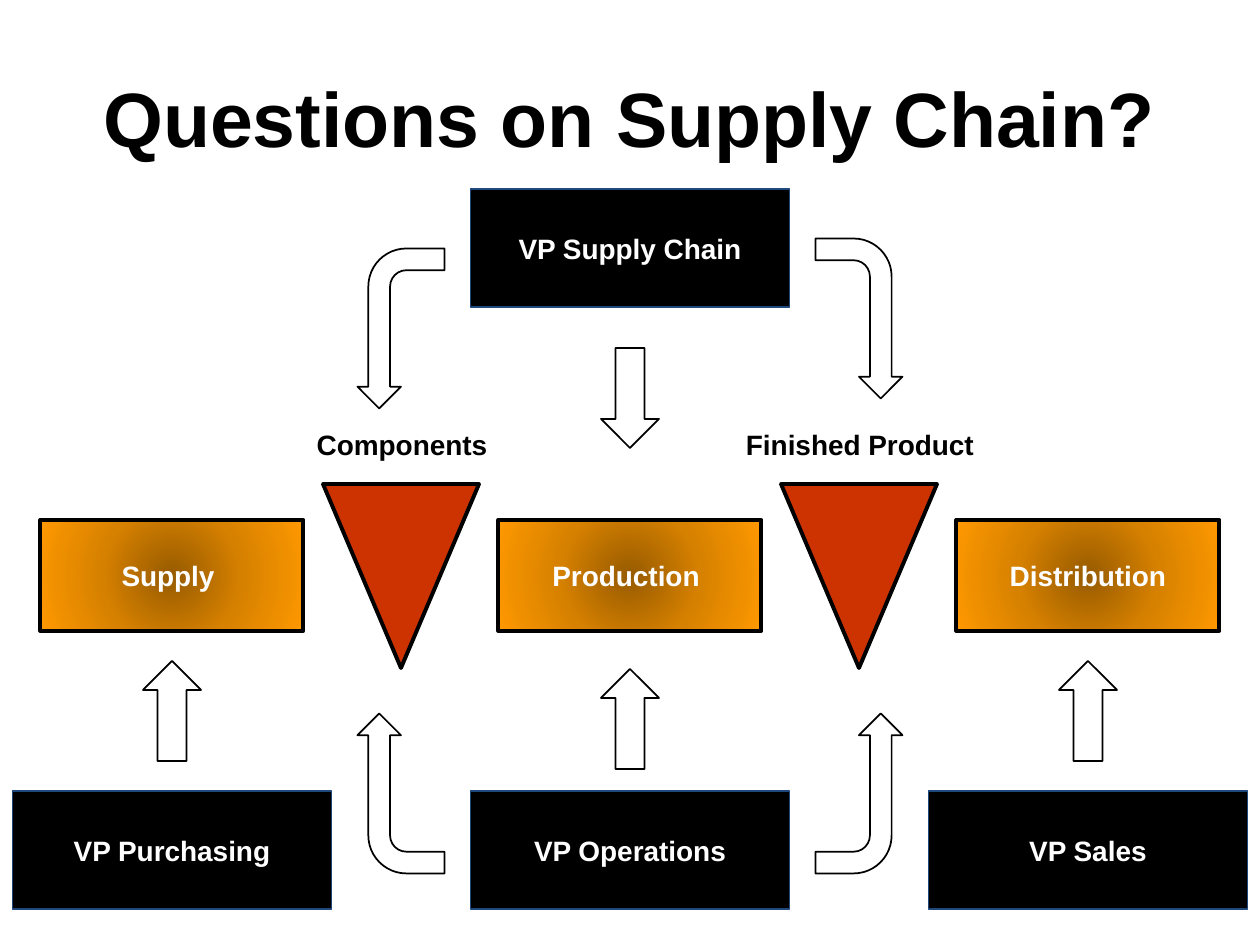
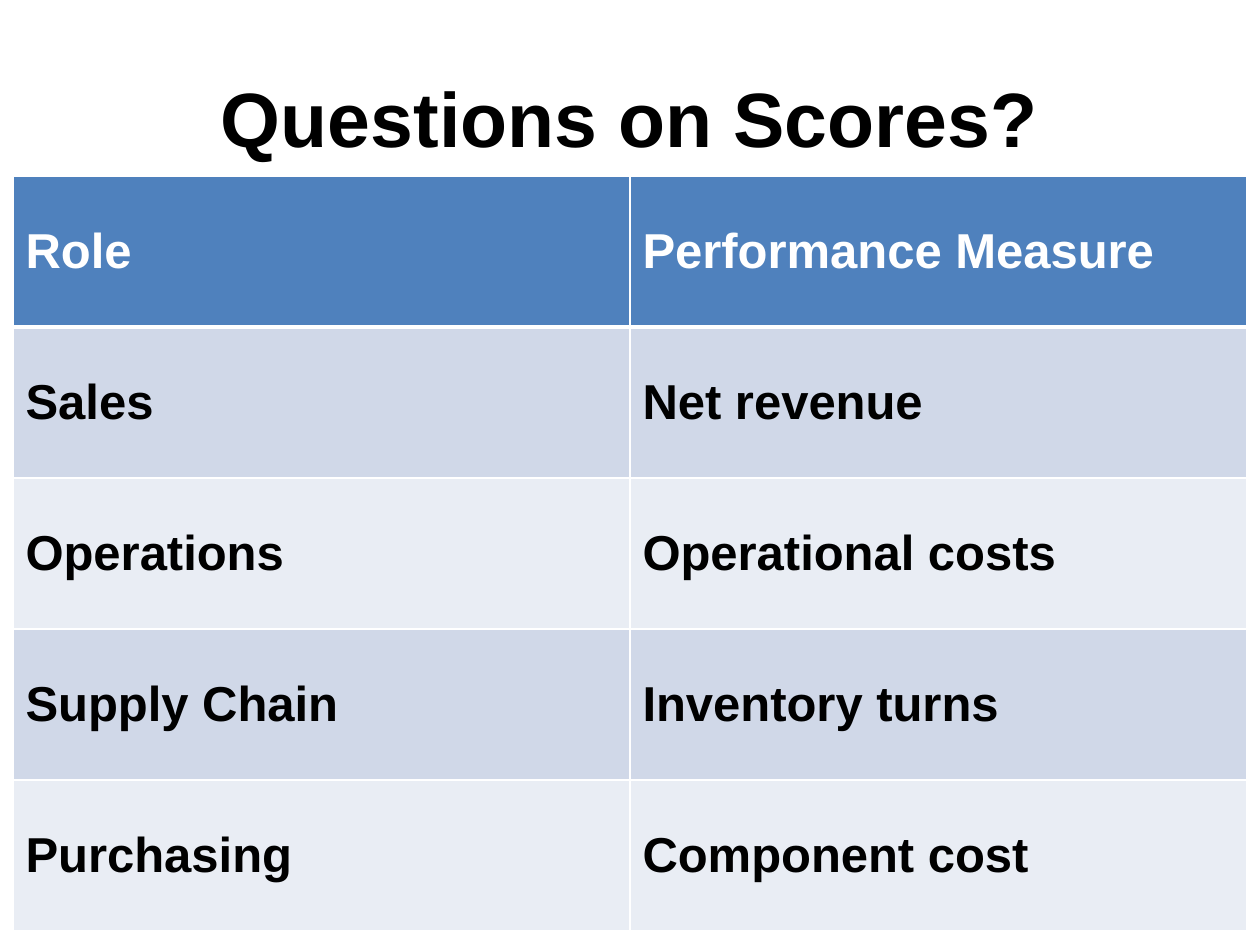
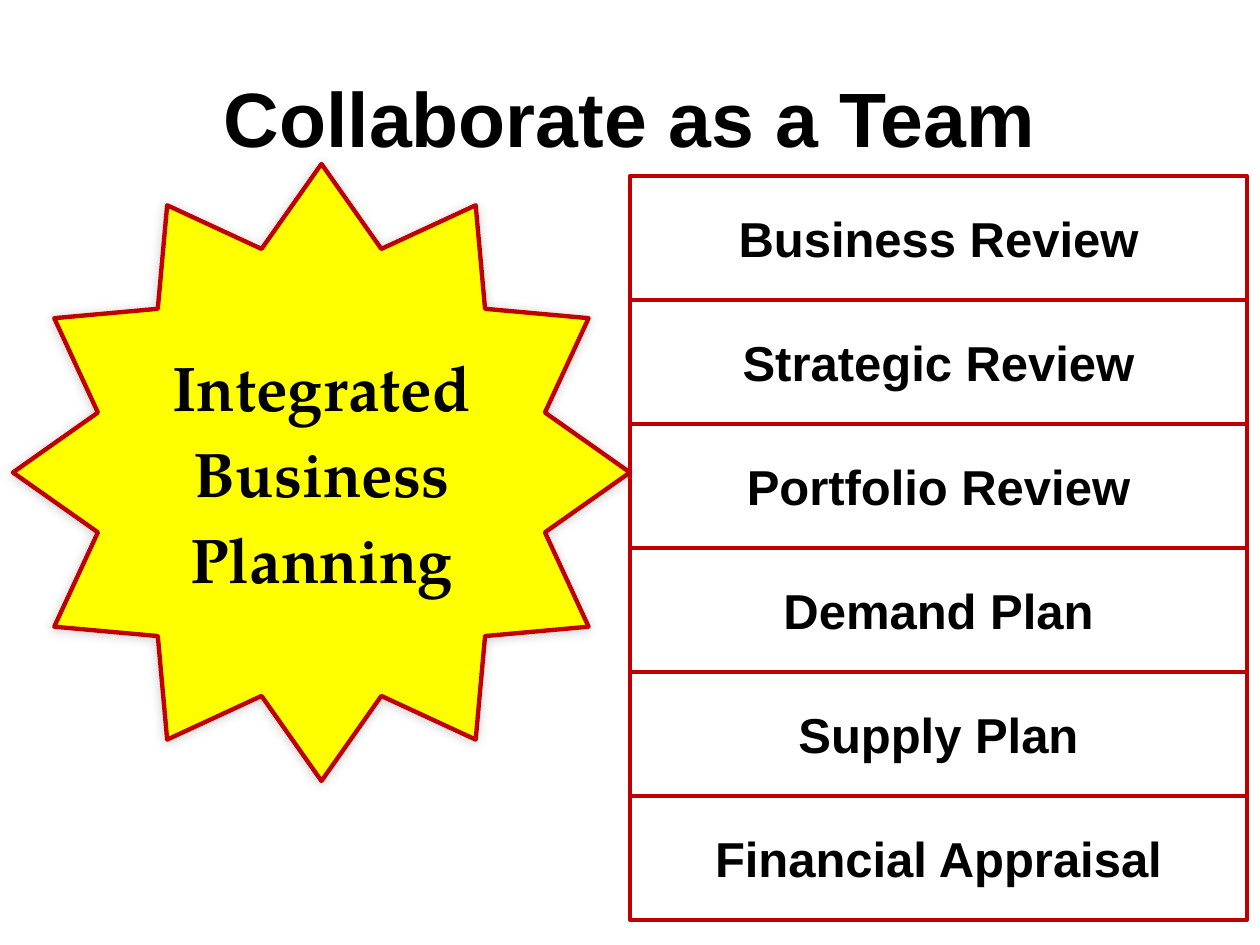
from lxml import etree
from pptx import Presentation
from pptx.dml.color import RGBColor
from pptx.enum.shapes import MSO_SHAPE as SHAPE
from pptx.enum.text import MSO_ANCHOR as ANCHOR, PP_ALIGN as ALIGN
from pptx.oxml.ns import qn
from pptx.util import Emu, Pt

EMU_PER_PX = 914400 / 126
SLIDE_WIDTH, SLIDE_HEIGHT = 1260, 945
TITLE_ONLY = 5

BLACK = RGBColor(0x00, 0x00, 0x00)
WHITE = RGBColor(0xFF, 0xFF, 0xFF)
NAVY = RGBColor(0x1F, 0x49, 0x7D)
RED = RGBColor(0xCC, 0x33, 0x00)
DARK_RED = RGBColor(0xC0, 0x00, 0x00)
YELLOW = RGBColor(0xFF, 0xFF, 0x00)
HEADER_BLUE = RGBColor(0x4F, 0x81, 0xBD)
ROW_BLUES = (RGBColor(0xD0, 0xD8, 0xE8), RGBColor(0xE9, 0xED, 0xF4))
ORANGE_STOPS = (
    (0, RGBColor(0x97, 0x5B, 0x00)),
    (50, RGBColor(0xD7, 0x81, 0x00)),
    (100, RGBColor(0xFF, 0x99, 0x00)),
)

BODY_FONT = "Arial"
STAR_FONT = "TeX Gyre Pagella"

COLUMN_CENTERS = (172, 630, 1088)
VP_SIZE = (319, 118)
STAGE_SIZE = (263, 111)
ARROW_SIZE = (58, 100)
BENT_ARROW_SIZE = (160, 87)
INVENTORY_SIZE = (156, 184)


def px(length):
    return Emu(round(length * EMU_PER_PX))


def box(left, top, width, height):
    return px(left), px(top), px(width), px(height)


def centered_box(center, top, size):
    width, height = size
    return box(center - width / 2, top, width, height)


def add_element(parent, tag, **attributes):
    values = {name: str(value) for name, value in attributes.items()}
    return etree.SubElement(parent, qn(tag), values)


def format_text(text_frame, size, color, font=BODY_FONT, align=ALIGN.CENTER):
    for paragraph in text_frame.paragraphs:
        paragraph.alignment = align
        for run in paragraph.runs:
            run.font.name = font
            run.font.size = Pt(size)
            run.font.bold = True
            run.font.color.rgb = color


def add_titled_slide(presentation, title, margin=63):
    slide = presentation.slides.add_slide(presentation.slide_layouts[TITLE_ONLY])
    placeholder = slide.shapes.title
    placeholder.left, placeholder.top, placeholder.width, placeholder.height = box(
        margin, 38, SLIDE_WIDTH - 2 * margin, 157
    )
    placeholder.text_frame.text = title
    placeholder.text_frame.vertical_anchor = ANCHOR.MIDDLE
    format_text(placeholder.text_frame, 44, BLACK)
    return slide


def style_shape(shape, fill, line, line_width):
    """Set outline and fill; a fill of None leaves the fill as it is."""
    shape.shadow.inherit = False
    if fill is not None:
        shape.fill.solid()
        shape.fill.fore_color.rgb = fill
    shape.line.color.rgb = line
    shape.line.width = Pt(line_width)


def set_shape_text(shape, text, size, color, font=BODY_FONT, wrap=True):
    text_frame = shape.text_frame
    text_frame.text = text
    text_frame.word_wrap = wrap
    text_frame.vertical_anchor = ANCHOR.MIDDLE
    format_text(text_frame, size, color, font)


def add_vp_box(slide, center, top, text):
    shape = slide.shapes.add_shape(SHAPE.RECTANGLE, *centered_box(center, top, VP_SIZE))
    style_shape(shape, BLACK, NAVY, 0)
    set_shape_text(shape, text, 16, WHITE)


def add_stage_box(slide, center, text):
    shape = slide.shapes.add_shape(SHAPE.RECTANGLE, *centered_box(center, 520, STAGE_SIZE))
    gradient = etree.Element(qn("a:gradFill"), rotWithShape="1")
    stops = add_element(gradient, "a:gsLst")
    for percent, color in ORANGE_STOPS:
        stop = add_element(stops, "a:gs", pos=percent * 1000)
        add_element(stop, "a:srgbClr", val=color)
    circle = add_element(gradient, "a:path", path="circle")
    add_element(circle, "a:fillToRect", l=50000, t=50000, r=50000, b=50000)
    shape._element.spPr.find(qn("a:prstGeom")).addnext(gradient)
    style_shape(shape, None, BLACK, 2.25)
    set_shape_text(shape, text, 16, WHITE)


def add_inventory(slide, center, label):
    """Draw a triangle pointing down, with its label above."""
    width, height = INVENTORY_SIZE
    left, top = center - width // 2, 484
    builder = slide.shapes.build_freeform(left, top, scale=EMU_PER_PX)
    builder.add_line_segments([(left + width, top), (center, top + height)], close=True)
    style_shape(builder.convert_to_shape(), RED, BLACK, 2.25)

    text_box = slide.shapes.add_textbox(*centered_box(center + 1, 427, (230, 34)))
    text_frame = text_box.text_frame
    text_frame.margin_left = text_frame.margin_right = 0
    text_frame.margin_top = text_frame.margin_bottom = 0
    set_shape_text(text_box, label, 16, BLACK, wrap=False)


def add_arrow(slide, kind, center, top):
    shape = slide.shapes.add_shape(kind, *centered_box(center, top, ARROW_SIZE))
    style_shape(shape, WHITE, BLACK, 1)


def add_bent_arrow(slide, left, top, rotation, flips):
    shape = slide.shapes.add_shape(SHAPE.BENT_ARROW, *box(left, top, *BENT_ARROW_SIZE))
    style_shape(shape, WHITE, BLACK, 1)
    shape.rotation = rotation
    for axis in flips:
        shape._element.spPr.find(qn("a:xfrm")).set(f"flip{axis}", "1")


def set_cell_borders(cell, widths):
    properties = cell._tc.get_or_add_tcPr()
    for side, width in widths.items():
        line = add_element(properties, f"a:ln{side}", w=Pt(width))
        add_element(add_element(line, "a:solidFill"), "a:srgbClr", val=WHITE)


def add_score_table(slide, rows):
    column_width, row_height = 617, 151
    row_count, column_count = len(rows), len(rows[0])
    frame = slide.shapes.add_table(
        row_count, column_count,
        *box(13, 176, column_width * column_count, row_height * row_count),
    )
    for row_index, row in enumerate(rows):
        is_header = row_index == 0
        fill = HEADER_BLUE if is_header else ROW_BLUES[(row_index - 1) % 2]
        top_width = 3 if row_index == 1 else 1
        bottom_width = 3 if is_header else 1
        for column_index, text in enumerate(row):
            cell = frame.table.cell(row_index, column_index)
            set_cell_borders(cell, {"L": 1, "R": 1, "T": top_width, "B": bottom_width})
            cell.fill.solid()
            cell.fill.fore_color.rgb = fill
            cell.vertical_anchor = ANCHOR.MIDDLE
            cell.text_frame.text = text
            format_text(cell.text_frame, 28, WHITE if is_header else BLACK, align=ALIGN.LEFT)


def add_star(slide, text):
    shape = slide.shapes.add_shape(SHAPE.STAR_12_POINT, *box(13, 164, 617, 617))
    style_shape(shape, YELLOW, DARK_RED, 2.5)
    set_shape_text(shape, text, 36, BLACK, STAR_FONT, wrap=False)
    for paragraph in shape.text_frame.paragraphs:
        paragraph.space_before = Pt(6)
    effects = shape._element.spPr.find(qn("a:effectLst"))
    shadow = add_element(
        effects, "a:outerShdw", blurRad=Pt(6), dist=Pt(1), dir=135 * 60000, rotWithShape=0
    )
    color = add_element(shadow, "a:srgbClr", val=BLACK)
    add_element(color, "a:alpha", val=20000)


def add_review_list(slide, reviews):
    height = 124
    for index, review in enumerate(reviews):
        shape = slide.shapes.add_shape(
            SHAPE.RECTANGLE, *box(630, 176 + index * height, 617, height)
        )
        shape.fill.background()
        style_shape(shape, None, DARK_RED, 2.5)
        set_shape_text(shape, review, 28, BLACK, wrap=False)


def build_supply_chain(presentation):
    slide = add_titled_slide(presentation, "Questions on Supply Chain?")
    add_inventory(slide, 401, "Components")
    add_inventory(slide, 859, "Finished Product")
    for center, stage, vp, arrow_top in zip(
        COLUMN_CENTERS,
        ("Supply ", "Production ", "Distribution"),
        ("VP Purchasing", "VP Operations", "VP Sales"),
        (661, 669, 661),
    ):
        add_stage_box(slide, center, stage)
        add_arrow(slide, SHAPE.UP_ARROW, center, arrow_top)
        add_vp_box(slide, center, 791, vp)

    add_vp_box(slide, COLUMN_CENTERS[1], 189, "VP Supply Chain")
    add_arrow(slide, SHAPE.DOWN_ARROW, COLUMN_CENTERS[1], 348)
    for left, top, rotation, flips in (
        (321, 285, 270, "H"),
        (779, 275, 90, ""),
        (321, 750, 90, "HV"),
        (779, 750, 270, "V"),
    ):
        add_bent_arrow(slide, left, top, rotation, flips)


def build_scores(presentation):
    slide = add_titled_slide(presentation, "Questions on Scores?", margin=13)
    add_score_table(slide, (
        ("Role", "Performance Measure"),
        ("Sales", "Net revenue"),
        ("Operations", "Operational costs"),
        ("Supply Chain", "Inventory turns"),
        ("Purchasing", "Component cost"),
    ))


def build_team(presentation):
    slide = add_titled_slide(presentation, "Collaborate as a Team")
    add_star(slide, "Integrated\nBusiness\nPlanning")
    add_review_list(slide, (
        "Business Review",
        "Strategic Review",
        "Portfolio Review",
        "Demand Plan",
        "Supply Plan",
        "Financial Appraisal",
    ))


def main():
    presentation = Presentation()
    presentation.slide_width = px(SLIDE_WIDTH)
    presentation.slide_height = px(SLIDE_HEIGHT)
    build_supply_chain(presentation)
    build_scores(presentation)
    build_team(presentation)
    presentation.save("out.pptx")


if __name__ == "__main__":
    main()
